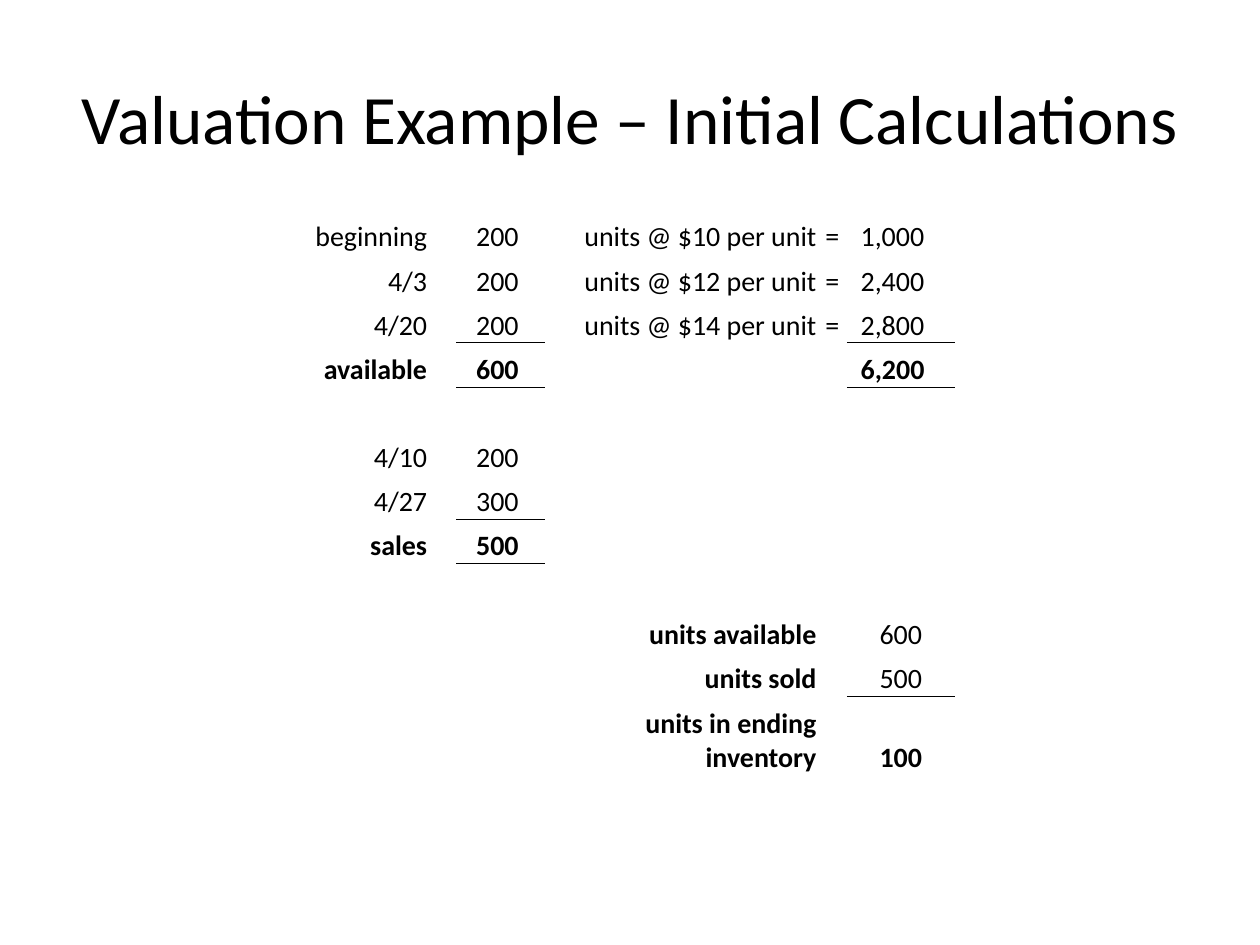
from lxml.etree import SubElement
from pptx import Presentation
from pptx.dml.color import RGBColor
from pptx.enum.text import MSO_ANCHOR, MSO_AUTO_SIZE, PP_ALIGN
from pptx.oxml.ns import qn
from pptx.util import Cm, Pt

BLACK = RGBColor(0, 0, 0)
FONT = "Calibri"
PLAIN = "{2D5ABB26-0587-4C30-8999-92F81FD0307C}"
WIDTHS = [2.92, 0.56, 1.78, 5.51, 0.58, 2.18]
HIGH, LAST = 0.89, 1.6
ALIGNS = [PP_ALIGN.RIGHT, PP_ALIGN.LEFT, PP_ALIGN.LEFT,
          PP_ALIGN.RIGHT, PP_ALIGN.CENTER, PP_ALIGN.LEFT]
ROWS = [
    ["beginning", "", "200", "units @ $10 per unit", "=", "1,000"],
    ["4/3", "", "200", "units @ $12 per unit", "=", "2,400"],
    ["4/20", "", "200", "units @ $14 per unit", "=", "2,800"],
    ["available", "", "600", "", "", "6,200"],
    [""] * 6,
    ["4/10", "", "200", "", "", ""],
    ["4/27", "", "300", "", "", ""],
    ["sales", "", "500", "", "", ""],
    [""] * 6,
    ["", "", "", "units available", "", "600"],
    ["", "", "", "units sold", "", "500"],
    ["", "", "", "units in ending inventory", "", "100"],
]
TOTALS = [3, 7, 11]
COUNT = 9
SUMS = [(3, 2), (3, 5), (7, 2), (11, 5)]


def add_run(para, text, size, bold=False):
    run = para.add_run()
    run.text = text
    run.font.name = FONT
    run.font.size = Pt(size)
    run.font.bold = bold
    run.font.color.rgb = BLACK


def add_title(slide, text):
    title = slide.shapes.title
    title.left, title.top = Cm(1.27), Cm(0.76)
    title.width, title.height = Cm(22.86), Cm(3.18)
    frame = title.text_frame
    frame.auto_size = MSO_AUTO_SIZE.NONE
    frame.vertical_anchor = MSO_ANCHOR.MIDDLE
    para = frame.paragraphs[0]
    para.alignment = PP_ALIGN.CENTER
    add_run(para, text, 39.6)


def indent(row, col):
    if col == 2:
        return 0.4
    if col == 5:
        return 0.66 if row >= COUNT else 0.28
    return 0.03


def fill_cell(cell, row, col, text):
    cell.fill.background()
    cell.vertical_anchor = MSO_ANCHOR.BOTTOM
    cell.margin_left = Cm(indent(row, col))
    cell.margin_right = cell.margin_top = Cm(0.03)
    cell.margin_bottom = 0
    if text:
        para = cell.text_frame.paragraphs[0]
        para.alignment = ALIGNS[col]
        bold = row in TOTALS or (row >= COUNT and col == 3)
        add_run(para, text, 16, bold)


def add_edge(cell, side):
    props = cell._tc.get_or_add_tcPr()
    line = SubElement(props, qn(f"a:{side}"), w=str(Pt(0.5)))
    fill = SubElement(line, qn("a:solidFill"))
    SubElement(fill, qn("a:srgbClr"), val=str(BLACK))
    props.insert(0, line)


def add_grid(slide):
    high = HIGH * (len(ROWS) - 1) + LAST
    frame = slide.shapes.add_table(len(ROWS), len(WIDTHS), Cm(5.72), Cm(4.24),
                                   Cm(sum(WIDTHS)), Cm(high))
    table = frame.table
    table.first_row = table.horz_banding = False
    table._tbl.tblPr.find(qn("a:tableStyleId")).text = PLAIN
    for col, width in enumerate(WIDTHS):
        table.columns[col].width = Cm(width)
    for row, texts in enumerate(ROWS):
        table.rows[row].height = Cm(LAST if row == len(ROWS) - 1 else HIGH)
        for col, text in enumerate(texts):
            fill_cell(table.cell(row, col), row, col, text)
    for row, col in SUMS:
        add_edge(table.cell(row - 1, col), "lnB")
        add_edge(table.cell(row, col), "lnT")


def main():
    deck = Presentation()
    deck.slide_width, deck.slide_height = Cm(25.4), Cm(19.05)
    slide = deck.slides.add_slide(deck.slide_layouts[5])
    add_title(slide, "Valuation Example – Initial Calculations")
    add_grid(slide)
    deck.save("out.pptx")


if __name__ == "__main__":
    main()
